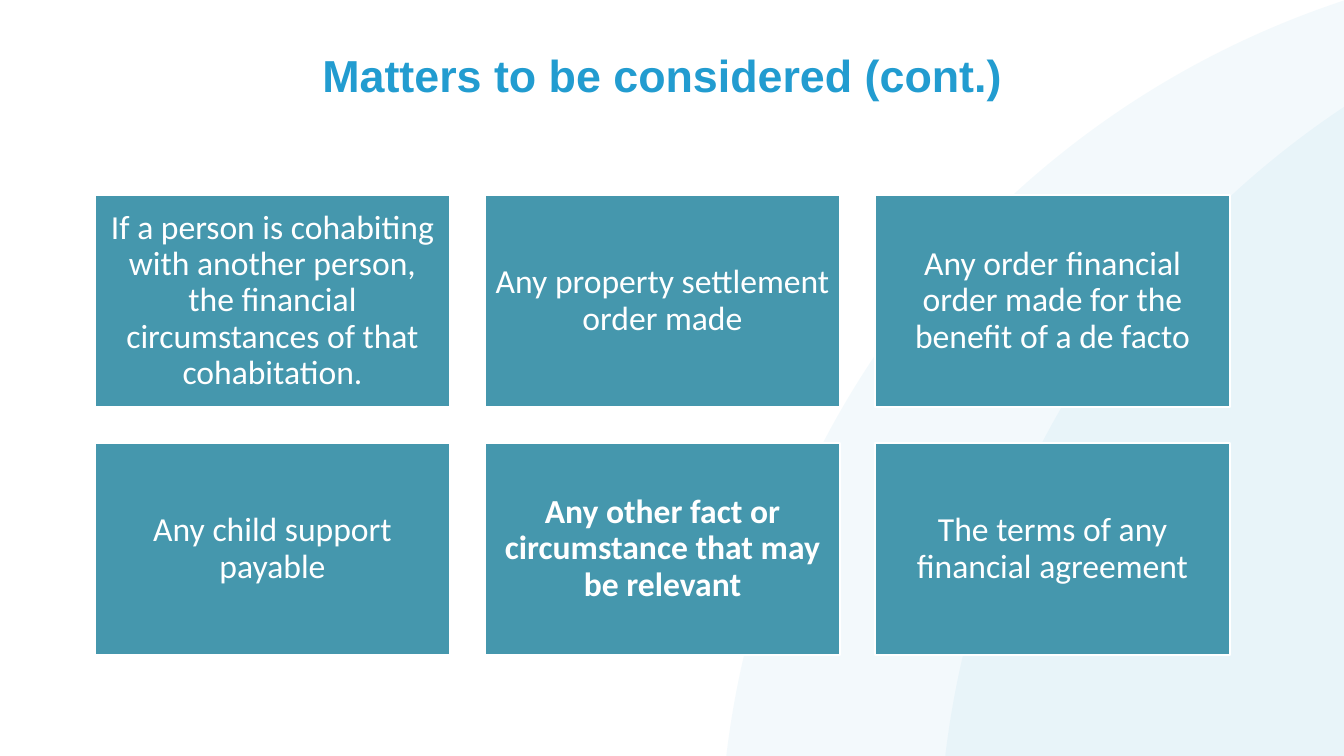
from dataclasses import dataclass
from lxml.etree import SubElement
from pptx import Presentation
from pptx.dml.color import RGBColor
from pptx.enum.shapes import MSO_SHAPE
from pptx.enum.text import MSO_ANCHOR, PP_ALIGN
from pptx.oxml.ns import qn
from pptx.util import Emu, Pt

PAGE_WIDTH, PAGE_HEIGHT = 1344, 756
EMU_PER_PX = 12192000 / PAGE_WIDTH


@dataclass(frozen=True)
class Theme:
    accent: RGBColor = RGBColor(0x22, 0x9C, 0xD0)
    card: RGBColor = RGBColor(0x45, 0x97, 0xAD)
    white: RGBColor = RGBColor(0xFF, 0xFF, 0xFF)
    title_font: str = "Arial"
    card_font: str = "Calibri"
    title_size: int = 32
    card_size: int = 24
    arc_opacity: int = 5


THEME = Theme()

MATTERS = [
    ("If a person is cohabiting with another person, the financial "
     "circumstances of that cohabitation.", False),
    ("Any property settlement order made", False),
    ("Any order financial order made for the benefit of a de facto", False),
    ("Any child support payable", False),
    ("Any other fact or circumstance that may be relevant", True),
    ("The terms of any financial agreement", False),
]
COLUMNS = 3
CARD_LEFT, CARD_TOP = 95, 195
CARD_WIDTH, CARD_HEIGHT = 355, 212
COLUMN_STEP, ROW_STEP = 390, 248


def px(length):
    return Emu(round(length * EMU_PER_PX))


def set_all(target, values):
    for name, value in values.items():
        setattr(target, name, value)


def write_text(shape, text, font, color, frame):
    set_all(shape.text_frame, {"word_wrap": True, **frame})
    para = shape.text_frame.paragraphs[0]
    set_all(para, {"alignment": PP_ALIGN.CENTER, "line_spacing": 0.9})
    span = para.add_run()
    span.text = text
    set_all(span.font, font)
    span.font.color.rgb = color


def add_filled(page, kind, left, top, width, height, color):
    shape = page.shapes.add_shape(kind, px(left), px(top), px(width), px(height))
    shape.shadow.inherit = False
    shape.fill.solid()
    shape.fill.fore_color.rgb = color
    return shape


def add_arc(page, left):
    circle = add_filled(page, MSO_SHAPE.OVAL, left, -45, 1816, 1816, THEME.accent)
    circle.line.fill.background()
    color = circle.fill._xPr.find(qn("a:solidFill")).find(qn("a:srgbClr"))
    SubElement(color, qn("a:alpha"), val=str(THEME.arc_opacity * 1000))


def add_title(page, text):
    box = page.shapes.add_textbox(px(95), px(49), px(1135), px(98))
    font = {"name": THEME.title_font, "size": Pt(THEME.title_size), "bold": True}
    write_text(box, text, font, THEME.accent, {"vertical_anchor": MSO_ANCHOR.TOP})


def add_card(page, index, text, bold):
    row, column = divmod(index, COLUMNS)
    card = add_filled(page, MSO_SHAPE.RECTANGLE,
                      CARD_LEFT + column * COLUMN_STEP, CARD_TOP + row * ROW_STEP,
                      CARD_WIDTH, CARD_HEIGHT, THEME.card)
    card.line.color.rgb = THEME.white
    card.line.width = Pt(1)
    frame = {f"margin_{side}": px(10) for side in ("left", "top", "right", "bottom")}
    frame["vertical_anchor"] = MSO_ANCHOR.MIDDLE
    font = {"name": THEME.card_font, "size": Pt(THEME.card_size), "bold": bold}
    write_text(card, text, font, THEME.white, frame)


def main():
    deck = Presentation()
    set_all(deck, {"slide_width": px(PAGE_WIDTH), "slide_height": px(PAGE_HEIGHT)})
    page = deck.slides.add_slide(deck.slide_layouts[6])
    for left in (720, 939):
        add_arc(page, left)
    add_title(page, "Matters to be considered (cont.)")
    for index, (text, bold) in enumerate(MATTERS):
        add_card(page, index, text, bold)
    deck.save("out.pptx")


if __name__ == "__main__":
    main()
